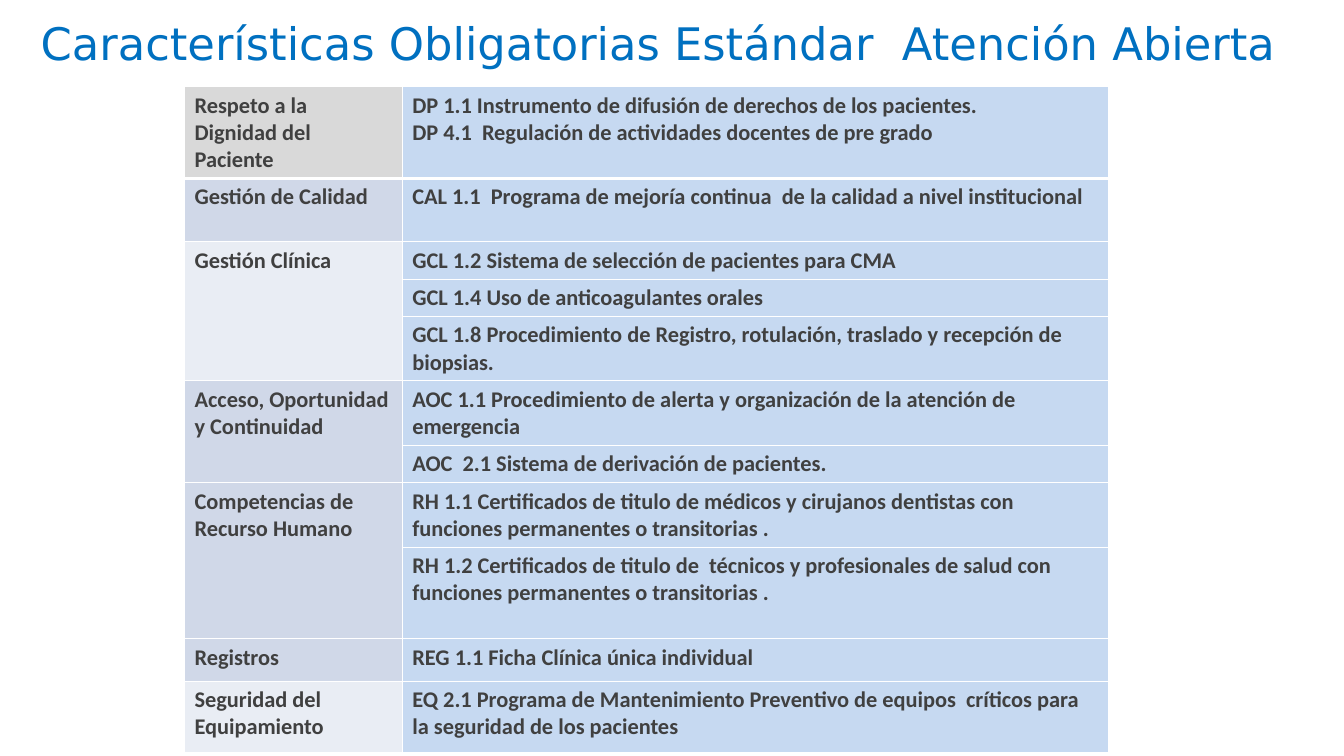
from dataclasses import dataclass

from lxml import etree
from pptx import Presentation
from pptx.dml.color import RGBColor
from pptx.enum.text import MSO_ANCHOR, PP_ALIGN
from pptx.oxml.ns import qn
from pptx.util import Pt

CENTER = PP_ALIGN.CENTER
LEFT = PP_ALIGN.LEFT
MIDDLE = MSO_ANCHOR.MIDDLE
TOP = MSO_ANCHOR.TOP
PX = 9144
SLIDE_SIZE = (1333, 750)
TITLE_BOX = (12, 0, 1283, 84)
TABLE_BOX = (183, 86, 917, 664)
AREA_WIDTH = 216
MARGIN_X, MARGIN_Y = 10, 5


@dataclass(frozen=True)
class Theme:
    """Colours, fonts and type sizes of the slide."""
    title_font: str = "DejaVu Sans"
    body_font: str = "Calibri"
    title_size: int = 32
    body_size: int = 16
    title: str = "0070C0"
    text: str = "404040"
    border: str = "FFFFFF"
    header: str = "D9D9D9"
    band: str = "D0D8E8"
    light_band: str = "E9EDF4"
    requirement: str = "C6D9F1"
    thin: int = 1
    thick: int = 3


THEME = Theme()
TITLE = "Características Obligatorias Estándar  Atención Abierta"
AREAS = [
    ("Respeto a la Dignidad del Paciente", THEME.header, [
        (91, ["DP 1.1 Instrumento de difusión de derechos de los pacientes.",
              "DP 4.1  Regulación de actividades docentes de pre grado"])]),
    ("Gestión de Calidad", THEME.band, [
        (63, ["CAL 1.1  Programa de mejoría continua  de la calidad a nivel institucional"])]),
    ("Gestión Clínica", THEME.light_band, [
        (37, ["GCL 1.2 Sistema de selección de pacientes para CMA"]),
        (37, ["GCL 1.4 Uso de anticoagulantes orales"]),
        (64, ["GCL 1.8 Procedimiento de Registro, rotulación, traslado y recepción de biopsias."])]),
    ("Acceso, Oportunidad y Continuidad", THEME.band, [
        (64, ["AOC 1.1 Procedimiento de alerta y organización de la atención de emergencia"]),
        (37, ["AOC  2.1 Sistema de derivación de pacientes."])]),
    ("Competencias de Recurso Humano", THEME.band, [
        (64, ["RH 1.1 Certificados de titulo de médicos y cirujanos dentistas con "
              "funciones permanentes o transitorias ."]),
        (91, ["RH 1.2 Certificados de titulo de  técnicos y profesionales de salud con "
              "funciones permanentes o transitorias ."])]),
    ("Registros", THEME.band, [
        (42, ["REG 1.1 Ficha Clínica única individual"])]),
    ("Seguridad del Equipamiento", THEME.light_band, [
        (71, ["EQ 2.1 Programa de Mantenimiento Preventivo de equipos  críticos para "
              "la seguridad de los pacientes"])]),
]


def scale(box):
    """Turn px lengths into EMU."""
    return [length * PX for length in box]


def write(text_frame, lines, font_name, size, color, bold, alignment):
    """Write one paragraph per line into a text frame."""
    for index, line in enumerate(lines):
        paragraph = text_frame.add_paragraph() if index else text_frame.paragraphs[0]
        paragraph.alignment = alignment
        run = paragraph.add_run()
        run.text = line
        run.font.name = font_name
        run.font.size = Pt(size)
        run.font.bold = bold
        run.font.color.rgb = RGBColor.from_string(color)


def add_title(slide, box):
    """Place the centred title in its box."""
    text_frame = slide.shapes.add_textbox(*scale(box)).text_frame
    text_frame.word_wrap = True
    text_frame.vertical_anchor = MIDDLE
    write(text_frame, [TITLE], THEME.title_font, THEME.title_size, THEME.title, False, CENTER)


def style_cell(cell, color, row):
    """Set margins, borders and fill, with a thick rule under the first row."""
    cell.margin_left = cell.margin_right = MARGIN_X * PX
    cell.margin_top = cell.margin_bottom = MARGIN_Y * PX
    cell.vertical_anchor = TOP
    properties = cell._tc.get_or_add_tcPr()
    thick_side = {0: "lnB", 1: "lnT"}.get(row)
    for side in ("lnL", "lnR", "lnT", "lnB"):
        width = THEME.thick if side == thick_side else THEME.thin
        line = etree.SubElement(properties, qn(f"a:{side}"), w=str(Pt(width)))
        fill = etree.SubElement(line, qn("a:solidFill"))
        etree.SubElement(fill, qn("a:srgbClr"), val=THEME.border)
    cell.fill.solid()
    cell.fill.fore_color.rgb = RGBColor.from_string(color)


def write_cell(cell, lines):
    """Write bold body text into a table cell."""
    write(cell.text_frame, lines, THEME.body_font, THEME.body_size, THEME.text, True, LEFT)


def add_requirements_table(slide, box):
    """Build the table of areas and their mandatory requirements."""
    row_count = sum(len(requirements) for _, _, requirements in AREAS)
    table = slide.shapes.add_table(row_count, 2, *scale(box)).table
    table.first_row = table.horz_banding = False
    for column, width in zip(table.columns, (AREA_WIDTH, box[2] - AREA_WIDTH)):
        column.width = width * PX
    row = 0
    for area, color, requirements in AREAS:
        first_row = row
        for height, lines in requirements:
            table.rows[row].height = height * PX
            style_cell(table.cell(row, 0), color, row)
            style_cell(table.cell(row, 1), THEME.requirement, row)
            write_cell(table.cell(row, 1), lines)
            row += 1
        area_cell = table.cell(first_row, 0)
        if len(requirements) > 1:
            area_cell.merge(table.cell(row - 1, 0))
        write_cell(area_cell, [area])


def main():
    """Build and save the presentation."""
    presentation = Presentation()
    presentation.slide_width, presentation.slide_height = scale(SLIDE_SIZE)
    slide = presentation.slides.add_slide(presentation.slide_layouts[6])
    add_title(slide, TITLE_BOX)
    add_requirements_table(slide, TABLE_BOX)
    presentation.save("out.pptx")


if __name__ == "__main__":
    main()
